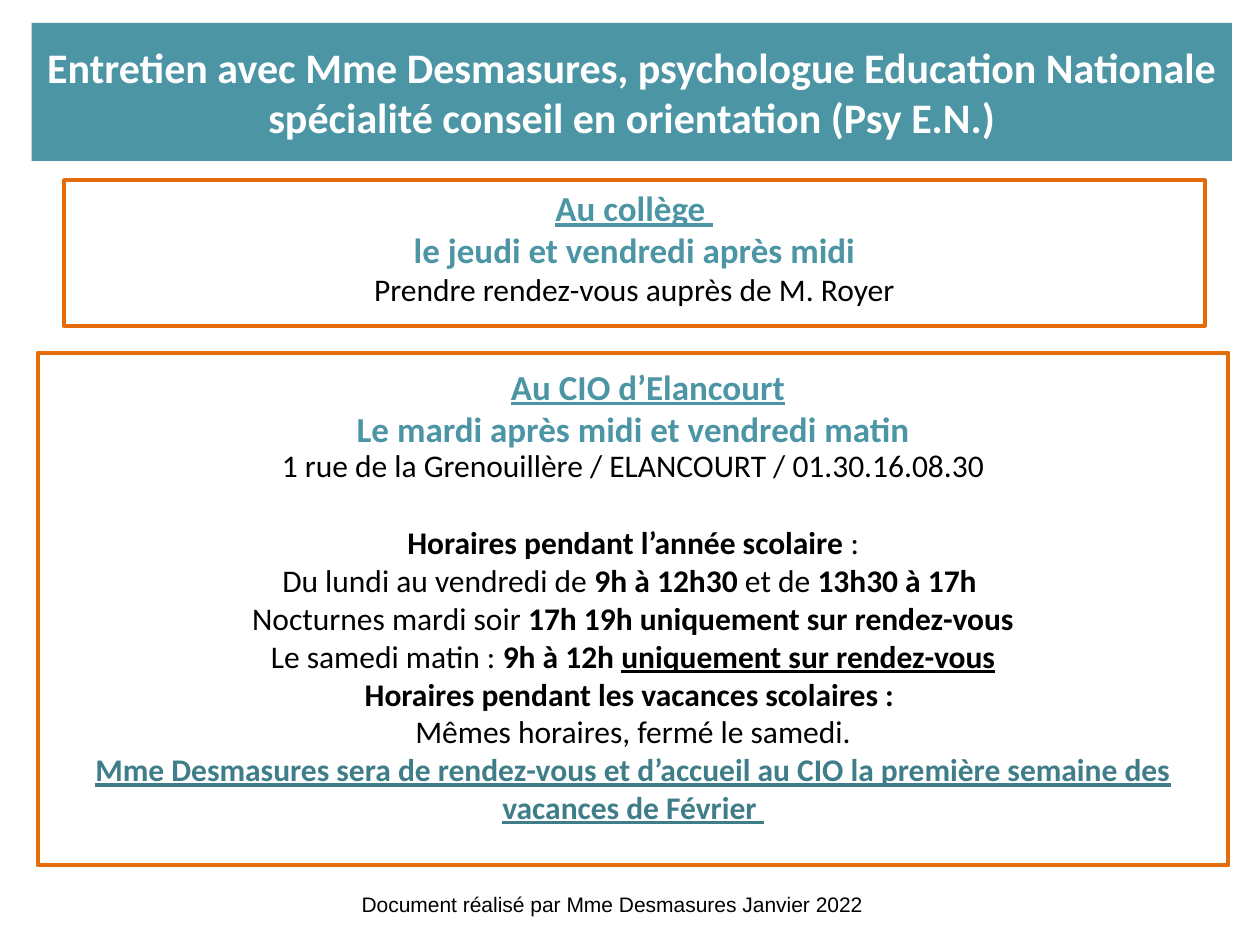
from dataclasses import dataclass

from pptx import Presentation
from pptx.dml.color import RGBColor
from pptx.enum.shapes import MSO_SHAPE
from pptx.enum.text import MSO_ANCHOR as Anchor, MSO_AUTO_SIZE as AutoSize, PP_ALIGN as Align
from pptx.util import Pt


@dataclass(frozen=True)
class Theme:
    teal: RGBColor = RGBColor(0x4C, 0x95, 0xA4)
    dark_teal: RGBColor = RGBColor(0x3F, 0x7D, 0x89)
    orange: RGBColor = RGBColor(0xE4, 0x6C, 0x0A)
    black: RGBColor = RGBColor(0, 0, 0)
    white: RGBColor = RGBColor(0xFF, 0xFF, 0xFF)
    title: Pt = Pt(24)
    heading: Pt = Pt(20)
    body: Pt = Pt(18)
    footer: Pt = Pt(12)


theme = Theme()

# Text formats: colour, then font attributes
TITLE = (theme.white, {"name": "Calibri", "size": theme.title, "bold": True})
WHEN = (theme.teal, {"name": "Calibri", "size": theme.heading, "bold": True})
PLACE = (theme.teal, {**WHEN[1], "underline": True})
PLAIN = (theme.black, {"name": "Calibri", "size": theme.body, "bold": False})
BOLD = (theme.black, {**PLAIN[1], "bold": True})
STRESS = (theme.black, {**BOLD[1], "underline": True})
NOTICE = (theme.dark_teal, STRESS[1])
FOOTER = (theme.black, {"name": "Arial", "size": theme.footer})


def write(frame, lines, align):
    for index, line in enumerate(lines):
        paragraph = frame.paragraphs[0] if index == 0 else frame.add_paragraph()
        paragraph.alignment = align
        for text, (colour, attributes) in line:
            run = paragraph.add_run()
            run.text = text
            run.font.color.rgb = colour
            for attribute, value in attributes.items():
                setattr(run.font, attribute, value)


def add_panel(position, lines, fill=None, anchor=Anchor.TOP):
    panel = slide.shapes.add_shape(MSO_SHAPE.RECTANGLE, *map(Pt, position))
    panel.shadow.inherit = False
    if fill is None:
        panel.fill.background()
        panel.line.color.rgb = theme.orange
        panel.line.width = Pt(2.25)
    else:
        panel.fill.solid()
        panel.fill.fore_color.rgb = fill
        panel.line.fill.background()
    panel.text_frame.word_wrap = True
    panel.text_frame.vertical_anchor = anchor
    write(panel.text_frame, lines, Align.CENTER)
    return panel.text_frame


deck = Presentation()
deck.slide_width, deck.slide_height = Pt(720), Pt(540)
slide = deck.slides.add_slide(deck.slide_layouts[6])

# Title banner
add_panel((18, 13, 686, 79), [
    [("Entretien avec Mme Desmasures, psychologue Education Nationale ", TITLE)],
    [("spécialité conseil en orientation (Psy E.N.)", TITLE)],
], theme.teal, Anchor.MIDDLE)

# Appointments at the guidance centre
centre = add_panel((21.6, 201.6, 680.4, 293), [
    [("Au CIO d’Elancourt", PLACE)],
    [("Le mardi après midi et vendredi matin", WHEN)],
    [("1 rue de la Grenouillère / ELANCOURT / 01.30.16.08.30", PLAIN)],
    [("Horaires pendant l’année scolaire", BOLD), (" :", PLAIN)],
    [("Du lundi au vendredi de ", PLAIN), ("9h à 12h30", BOLD),
     (" et de ", PLAIN), ("13h30 à 17h ", BOLD)],
    [("Nocturnes mardi soir ", PLAIN), ("17h 19h uniquement sur rendez-vous", BOLD)],
    [("Le samedi matin : ", PLAIN), ("9h à 12h ", BOLD),
     ("uniquement sur rendez-vous", STRESS)],
    [("Horaires pendant les vacances scolaires : ", BOLD)],
    [("Mêmes horaires, fermé le samedi.", PLAIN)],
    [("Mme Desmasures sera de rendez-vous et d’accueil au CIO la première "
      "semaine des vacances de Février ", NOTICE)],
])
centre.margin_top = Pt(7)
place, _, address, term_hours = centre.paragraphs[:4]
place._p.get_or_add_pPr().set("marL", str(Pt(17)))
address.line_spacing = 0.95
term_hours.space_before = Pt(22)

# Appointments at school
add_panel((36.75, 103, 651.6, 83.5), [
    [("Au collège ", PLACE)],
    [("le jeudi et vendredi après midi", WHEN)],
    [("Prendre rendez-vous auprès de M. Royer", PLAIN)],
])

# Footer
credit = slide.shapes.add_textbox(Pt(199.5), Pt(506), Pt(303), Pt(21.8)).text_frame
credit.word_wrap = False
credit.auto_size = AutoSize.SHAPE_TO_FIT_TEXT
write(credit, [[("Document réalisé par Mme Desmasures Janvier 2022", FOOTER)]], Align.LEFT)

deck.save("out.pptx")
